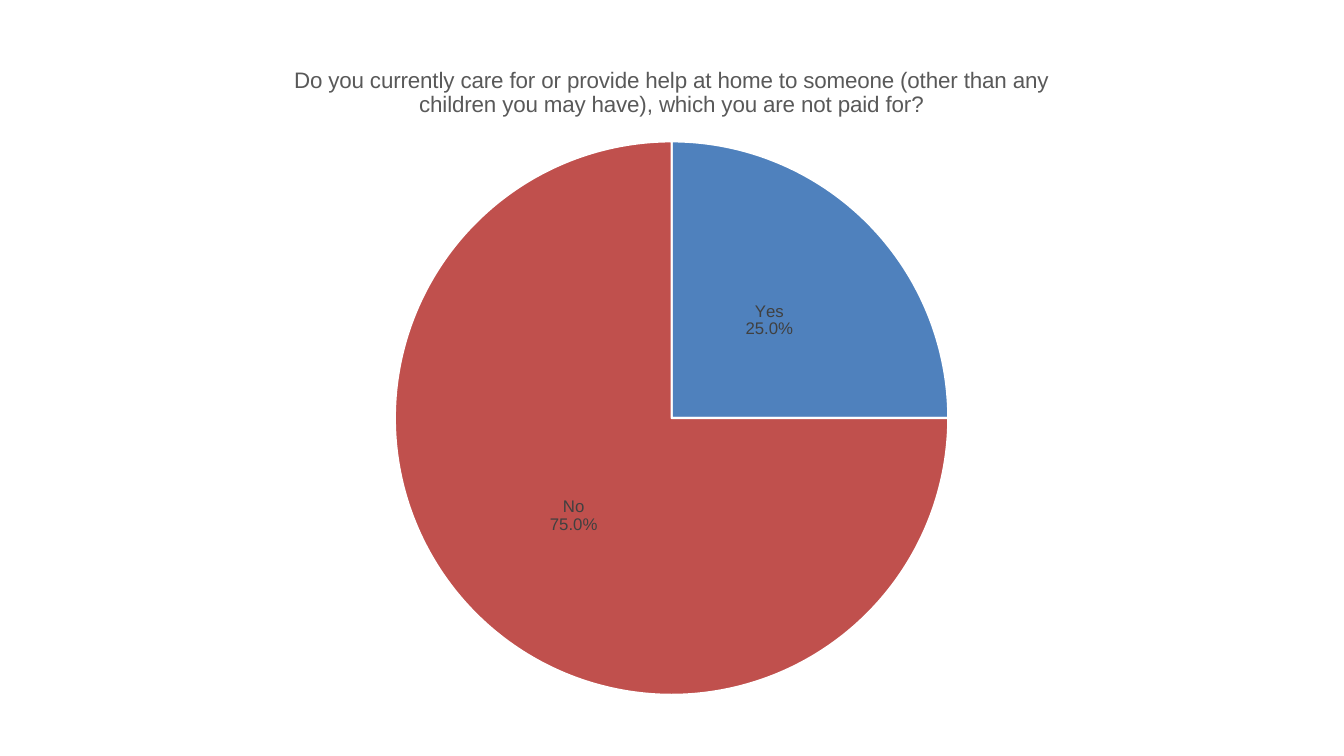
from lxml import etree
from pptx import Presentation
from pptx.chart.data import CategoryChartData
from pptx.dml.color import RGBColor
from pptx.enum.chart import XL_CHART_TYPE as ChartType, XL_LABEL_POSITION as LabelPos
from pptx.oxml.ns import qn
from pptx.util import Cm, Pt

COLORS = {
    "yes": "4F81BD",
    "no": "C0504D",
    "border": "FFFFFF",
    "title": "595959",
    "label": "404040",
    "base": "000000",
}
QUESTION = (
    "Do you currently care for or provide help at home to someone "
    "(other than any children you may have), which you are not paid for?"
)
ANSWERS = {"Yes": 25, "No": 75}


def style_font(font, name, size, color):
    font.name = name
    font.size = Pt(size)
    font.bold = False
    font.color.rgb = RGBColor.from_string(COLORS[color])


def place_plot(chart, x, y, w, h):
    """Fix the plot area, in fractions of the chart's size."""
    plot_area = chart.plots[0]._element.getparent()
    for old in plot_area.findall(qn("c:layout")):
        plot_area.remove(old)
    layout = etree.Element(qn("c:layout"))
    plot_area.insert(0, layout)
    manual = etree.SubElement(layout, qn("c:manualLayout"))
    settings = {"layoutTarget": "inner", "xMode": "edge", "yMode": "edge",
                "x": x, "y": y, "w": w, "h": h}
    for tag, value in settings.items():
        etree.SubElement(manual, qn(f"c:{tag}")).set("val", str(value))


def label_slices(series):
    labels = series.data_labels
    labels.show_value = False
    labels.show_category_name = True
    labels.show_percentage = True
    labels.number_format = "0.0%"
    labels.number_format_is_linked = False
    labels.position = LabelPos.CENTER
    style_font(labels.font, "Arial", 12, "label")
    separator = etree.Element(qn("c:separator"))
    separator.text = "\n"
    labels._element.find(qn("c:showBubbleSize")).addnext(separator)


def add_answer_pie(slide, left, top, width, height):
    data = CategoryChartData()
    data.categories = list(ANSWERS)
    data.add_series("Series 1", list(ANSWERS.values()))
    chart = slide.shapes.add_chart(
        ChartType.PIE, left, top, width, height, data).chart
    style_font(chart.font, "Calibri", 10, "base")
    chart.has_legend = False

    chart.has_title = True
    tf = chart.chart_title.text_frame
    tf.text = QUESTION
    style_font(tf.paragraphs[0].runs[0].font, "Arial", 16, "title")
    chart.chart_title.include_in_layout = False

    series = chart.plots[0].series[0]
    for i, answer in enumerate(ANSWERS):
        fmt = series.points[i].format
        fmt.fill.solid()
        fmt.fill.fore_color.rgb = RGBColor.from_string(COLORS[answer.lower()])
        fmt.line.color.rgb = RGBColor.from_string(COLORS["border"])
        fmt.line.width = Pt(1.5)
    label_slices(series)
    place_plot(chart, 0.23, 0.14, 0.54, 0.84)


def main():
    prs = Presentation()
    prs.slide_width, prs.slide_height = Cm(33.87), Cm(19.05)
    slide = prs.slides.add_slide(prs.slide_layouts[6])
    add_answer_pie(slide, Cm(4.01), Cm(1.09), Cm(25.83), Cm(16.87))
    prs.save("out.pptx")


if __name__ == "__main__":
    main()
